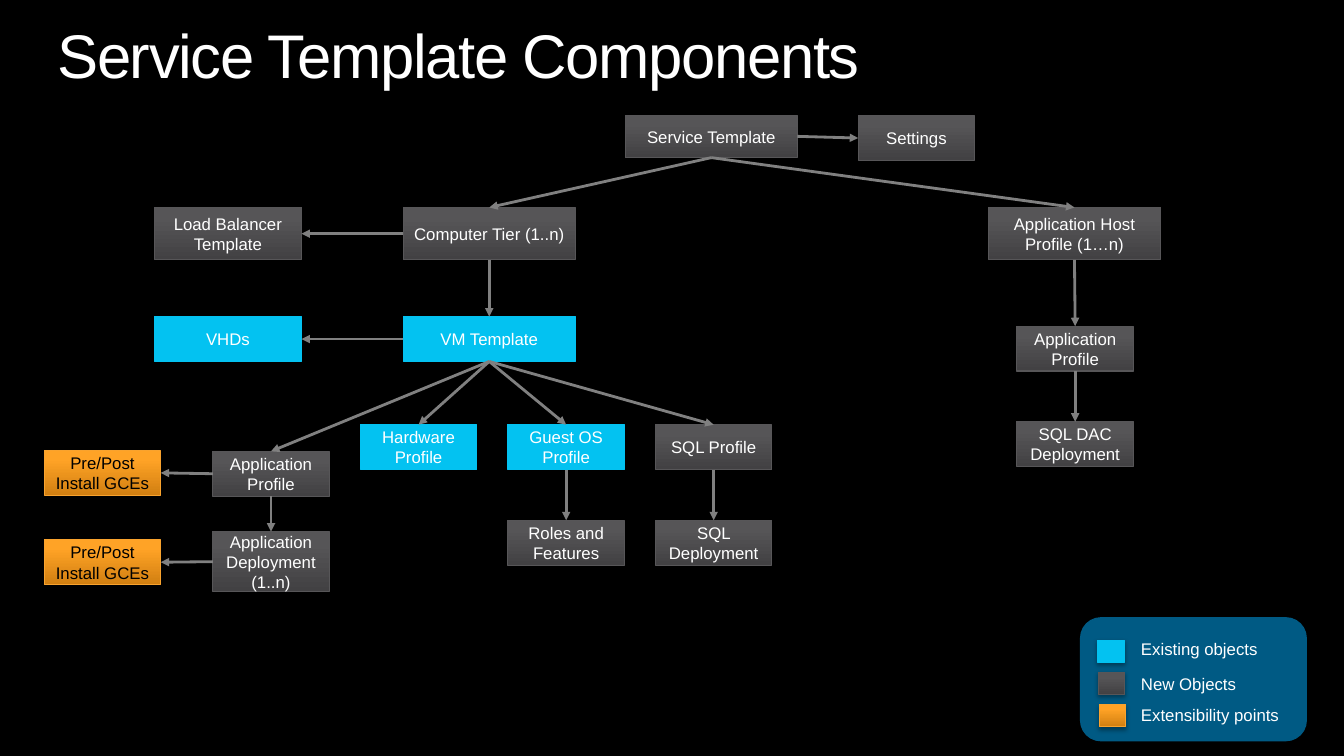
from copy import deepcopy

from lxml import etree
from pptx import Presentation
from pptx.dml.color import RGBColor
from pptx.enum.shapes import MSO_CONNECTOR, MSO_SHAPE
from pptx.enum.text import MSO_ANCHOR, MSO_AUTO_SIZE, PP_ALIGN
from pptx.oxml.ns import qn
from pptx.util import Pt

ROUNDED = MSO_SHAPE.ROUNDED_RECTANGLE
STRAIGHT = MSO_CONNECTOR.STRAIGHT
CENTER, MIDDLE = PP_ALIGN.CENTER, MSO_ANCHOR.MIDDLE
GROW = MSO_AUTO_SIZE.SHAPE_TO_FIT_TEXT
TOP, LEFT, BOTTOM, RIGHT = range(4)  # connection sites of a box

BLACK = RGBColor(0x00, 0x00, 0x00)
WHITE = RGBColor(0xFF, 0xFF, 0xFF)
ARROW_GRAY = RGBColor(0x80, 0x80, 0x80)
PANEL_BLUE = RGBColor(0x00, 0x5A, 0x84)
CYAN = RGBColor(0x03, 0xC2, 0xF1)
GRAY_DARK = RGBColor(0x42, 0x41, 0x43)
GRAY_MID = RGBColor(0x56, 0x55, 0x57)
GRAY_LIGHT = RGBColor(0x57, 0x55, 0x58)
GRAY_EDGE = RGBColor(0x57, 0x56, 0x58)
ORANGE_DARK = RGBColor(0xD1, 0x7F, 0x11)
ORANGE_MID = RGBColor(0xFF, 0xA3, 0x26)
ORANGE_LIGHT = RGBColor(0xFF, 0xA3, 0x27)
ORANGE_EDGE = RGBColor(0xF9, 0xA3, 0x2E)

# Each kind: fill colours from bottom to top, outline, text colour
PANEL = ([PANEL_BLUE], PANEL_BLUE, WHITE)
EXISTING = ([CYAN], CYAN, WHITE)
NEW = ([GRAY_DARK, GRAY_MID, GRAY_LIGHT], GRAY_EDGE, WHITE)
EXTENSION = ([ORANGE_DARK, ORANGE_MID, ORANGE_LIGHT], ORANGE_EDGE, BLACK)


class DiagramSlide:
    font_name = "Arial"
    font_size = 12
    stop_positions = (0, 0.8, 1)

    def __init__(self, presentation):
        self.slide = presentation.slides.add_slide(presentation.slide_layouts[6])
        background = self.slide.background.fill
        background.solid()
        background.fore_color.rgb = BLACK

    def add_run(self, paragraph, text, color, size):
        run = paragraph.add_run()
        run.text = text
        run.font.name = self.font_name
        run.font.size = Pt(size)
        run.font.color.rgb = color
        return run

    def paint(self, shape, colors):
        fill = shape.fill
        if len(colors) == 1:
            fill.solid()
            fill.fore_color.rgb = colors[0]
            return
        fill.gradient()
        fill.gradient_angle = 90
        stop_list = shape.element.spPr.find(".//" + qn("a:gsLst"))
        stop_list.append(deepcopy(stop_list[-1]))
        for stop, color, position in zip(fill.gradient_stops, colors, self.stop_positions):
            stop.color.rgb = color
            stop.position = position

    def add_shadow(self, shape):
        shape.shadow.inherit = False
        effects = shape.element.spPr.find(qn("a:effectLst"))
        shadow = etree.SubElement(
            effects, qn("a:outerShdw"), blurRad=str(Pt(3.1)), dist=str(Pt(1.8)),
            dir="5400000", algn="ctr", rotWithShape="0")
        color = etree.SubElement(shadow, qn("a:srgbClr"), val=str(BLACK))
        etree.SubElement(color, qn("a:alpha"), val="35000")

    def add_box(self, kind, left, top, width, height, text="", rounded=False):
        colors, edge, text_color = kind
        shape = self.slide.shapes.add_shape(
            ROUNDED, Pt(left), Pt(top), Pt(width), Pt(height))
        if not rounded:
            shape.adjustments[0] = 0
        self.paint(shape, colors)
        shape.line.color.rgb = edge
        shape.line.width = Pt(0.75)
        self.add_shadow(shape)
        if text:
            frame = shape.text_frame
            frame.word_wrap = True
            frame.vertical_anchor = MIDDLE
            paragraph = frame.paragraphs[0]
            paragraph.alignment = CENTER
            self.add_run(paragraph, text, text_color, self.font_size)
        return shape

    def add_text(self, text, left, top, width, height, size=font_size):
        box = self.slide.shapes.add_textbox(Pt(left), Pt(top), Pt(width), Pt(height))
        frame = box.text_frame
        frame.word_wrap = True
        frame.auto_size = GROW
        frame.margin_left = frame.margin_right = Pt(0)
        frame.margin_top = frame.margin_bottom = Pt(0)
        paragraph = frame.paragraphs[0]
        return paragraph, self.add_run(paragraph, text, WHITE, size)

    def add_arrow(self, start, start_site, end, end_site):
        arrow = self.slide.shapes.add_connector(STRAIGHT, Pt(0), Pt(0), Pt(0), Pt(0))
        arrow.begin_connect(start, start_site)
        arrow.end_connect(end, end_site)
        arrow.line.color.rgb = ARROW_GRAY
        arrow.line.width = Pt(2)
        etree.SubElement(arrow.line._get_or_add_ln(), qn("a:tailEnd"), type="triangle")
        etree.SubElement(arrow.element.spPr, qn("a:effectLst"))


def main():
    presentation = Presentation()
    presentation.slide_width, presentation.slide_height = Pt(960), Pt(540)
    diagram = DiagramSlide(presentation)

    # Title
    paragraph, run = diagram.add_text("Service Template Components", 41, 18, 878, 48, 44)
    paragraph.line_spacing = 0.9
    run.font._element.set("spc", "-100")

    # Component boxes
    wide, medium, small = 123, 105.2, 83.2
    tall, low = 37.5, 32
    profile_columns = [152 + 105.4 * index for index in range(4)]
    app_x, hardware_x, guest_x, sql_x = profile_columns
    tier_x, side_x, extension_x, host_x = 288, 110.2, 31.6, 726.4
    tier_y, vm_y, profile_y, deployment_y = 148.2, 226.2, 303.4, 371.6
    box_table = {
        "service": (NEW, 446.6, 82.2, wide, 30.4, "Service Template"),
        "settings": (NEW, 613, 82.6, small, low, "Settings"),
        "tier": (NEW, tier_x, tier_y, wide, tall, "Computer Tier (1..n)"),
        "balancer": (NEW, side_x, tier_y, medium, tall, "Load Balancer Template"),
        "host": (NEW, 706, tier_y, wide, tall, "Application Host Profile (1…n)"),
        "vm": (EXISTING, tier_x, vm_y, wide, low, "VM Template"),
        "vhds": (EXISTING, side_x, vm_y, medium, low, "VHDs"),
        "app": (NEW, app_x, 322.4, small, low, "Application Profile"),
        "hardware": (EXISTING, hardware_x, profile_y, small, low, "Hardware Profile"),
        "guest": (EXISTING, guest_x, profile_y, small, low, "Guest OS Profile"),
        "sql": (NEW, sql_x, profile_y, small, low, "SQL Profile"),
        "app deployment": (NEW, app_x, 379.8, small, 42.8, "Application Deployment (1..n)"),
        "roles": (NEW, guest_x, deployment_y, small, low, "Roles and Features"),
        "sql deployment": (NEW, sql_x, deployment_y, small, low, "SQL Deployment"),
        "app scripts": (EXTENSION, extension_x, 321.8, small, low, "Pre/Post Install GCEs"),
        "deployment scripts": (EXTENSION, extension_x, 385.6, small, low, "Pre/Post Install GCEs"),
        "host app": (NEW, host_x, 233, small, low, "Application Profile"),
        "dac": (NEW, host_x, 301.2, small, low, "SQL DAC Deployment"),
    }
    boxes = {name: diagram.add_box(*values) for name, values in box_table.items()}

    # Arrows, grouped by the sides they join
    arrow_groups = {
        (BOTTOM, TOP): [
            ("service", "tier"), ("service", "host"), ("tier", "vm"),
            ("vm", "hardware"), ("vm", "guest"), ("vm", "app"), ("vm", "sql"),
            ("app", "app deployment"), ("guest", "roles"), ("sql", "sql deployment"),
            ("host", "host app"), ("host app", "dac")],
        (LEFT, RIGHT): [
            ("tier", "balancer"), ("vm", "vhds"), ("app", "app scripts"),
            ("app deployment", "deployment scripts")],
        (RIGHT, LEFT): [("service", "settings")],
    }
    for (start_site, end_site), pairs in arrow_groups.items():
        for start, end in pairs:
            diagram.add_arrow(boxes[start], start_site, boxes[end], end_site)

    # Legend
    diagram.add_box(PANEL, 771.8, 441.2, 161.4, 88, rounded=True)
    legend = [
        (EXISTING, 784.2, 457.2, 456.6, "Existing objects"),
        (NEW, 784.6, 480.2, 481.2, "New Objects"),
        (EXTENSION, 785.2, 503.2, 503.6, "Extensibility points"),
    ]
    for kind, left, top, label_top, label in legend:
        diagram.add_box(kind, left, top, 19, 16)
        diagram.add_text(label, 815, label_top, 131, 14.4)

    presentation.save("out.pptx")


if __name__ == "__main__":
    main()
